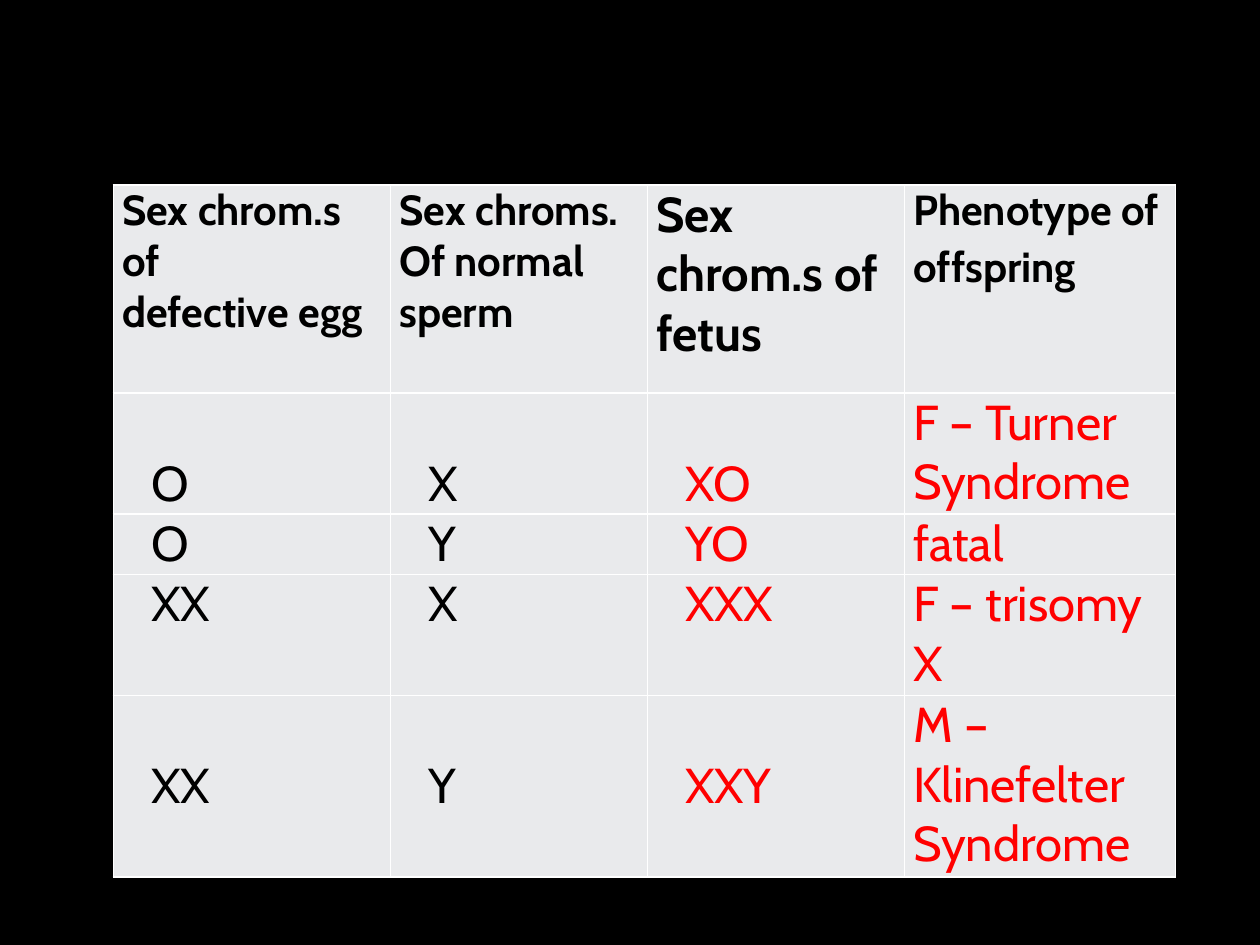
import pptx
import pptx.dml.color
import pptx.enum.text
import pptx.oxml
import pptx.oxml.ns
import pptx.util

RGBColor = pptx.dml.color.RGBColor
Inches, Pt = pptx.util.Inches, pptx.util.Pt
Anchor = pptx.enum.text.MSO_ANCHOR

BLACK = RGBColor(0x00, 0x00, 0x00)
RED = RGBColor(0xFF, 0x00, 0x00)
WHITE = RGBColor(0xFF, 0xFF, 0xFF)
CELL_GRAY = RGBColor(0xE9, 0xEA, 0xEC)
FONT = "Cabin"

# Each header: paragraphs, text size, space after each paragraph
HEADERS = [
    (["Sex chrom.s of", "defective egg"], 24, 0),
    (["Sex chroms. Of normal sperm"], 24, 0),
    (["Sex chrom.s of fetus"], 28, 0),
    (["Phenotype of", "offspring"], 24, 3),
]
# Egg, sperm, fetus, phenotype
CROSSES = [
    ("O", "X", "XO", "F – Turner Syndrome"),
    ("O", "Y", "YO", "fatal"),
    ("XX", "X", "XXX", "F – trisomy X"),
    ("XX", "Y", "XXY", "M –Klinefelter Syndrome"),
]
CROSS_ANCHORS = [Anchor.BOTTOM, Anchor.TOP, Anchor.TOP, Anchor.MIDDLE]
COLUMN_COLORS = [BLACK, BLACK, RED, RED]
PHENOTYPE = 3

LEFT, TOP = 0.9, 1.47
COL_WIDTHS = [2.2, 2.04, 2.04, 2.15]
LINE = 0.48
ROW_HEIGHTS = [1.65] + [LINE * lines for lines in (2, 1, 2, 3)]


def write(cell, paragraphs, size=28, color=BLACK, bold=False, after=0,
          indented=False, anchor=Anchor.TOP):
    cell.vertical_anchor = anchor
    tf = cell.text_frame
    for i, text in enumerate(paragraphs):
        p = tf.add_paragraph() if i else tf.paragraphs[0]
        p.space_after = Pt(after)
        if indented:
            pPr = p._p.get_or_add_pPr()
            pPr.set("marL", str(Inches(0.52)))
            pPr.set("indent", str(Inches(-0.29)))
        r = p.add_run()
        r.text = text
        r.font.name, r.font.size = FONT, Pt(size)
        r.font.bold, r.font.color.rgb = bold, color


def style(cell):
    """Set the insets, white borders and gray fill of a cell."""
    cell.margin_left = cell.margin_right = Inches(0.07)
    cell.margin_top = cell.margin_bottom = 0
    tcPr = cell._tc.get_or_add_tcPr()
    for side in ("lnL", "lnR", "lnT", "lnB"):
        tcPr.append(pptx.oxml.parse_xml(
            f'<a:{side} {pptx.oxml.ns.nsdecls("a")} w="{Pt(1)}"><a:solidFill>'
            f'<a:srgbClr val="{WHITE}"/></a:solidFill></a:{side}>'))
    cell.fill.solid()
    cell.fill.fore_color.rgb = CELL_GRAY


prs = pptx.Presentation()
prs.slide_width, prs.slide_height = Inches(10), Inches(7.5)
slide = prs.slides.add_slide(prs.slide_layouts[6])
slide.background.fill.solid()
slide.background.fill.fore_color.rgb = BLACK

table = slide.shapes.add_table(
    len(ROW_HEIGHTS), len(COL_WIDTHS), Inches(LEFT), Inches(TOP),
    Inches(sum(COL_WIDTHS)), Inches(sum(ROW_HEIGHTS))).table
for column, width in zip(table.columns, COL_WIDTHS):
    column.width = Inches(width)
for row, height in zip(table.rows, ROW_HEIGHTS):
    row.height = Inches(height)
for cell in table.iter_cells():
    style(cell)

for c, (paragraphs, size, after) in enumerate(HEADERS):
    write(table.cell(0, c), paragraphs, size=size, bold=True, after=after)
for r, (cross, anchor) in enumerate(zip(CROSSES, CROSS_ANCHORS), start=1):
    for c, text in enumerate(cross):
        is_phenotype = c == PHENOTYPE
        write(table.cell(r, c), [text], color=COLUMN_COLORS[c],
              indented=not is_phenotype,
              anchor=Anchor.TOP if is_phenotype else anchor)

prs.save("out.pptx")
